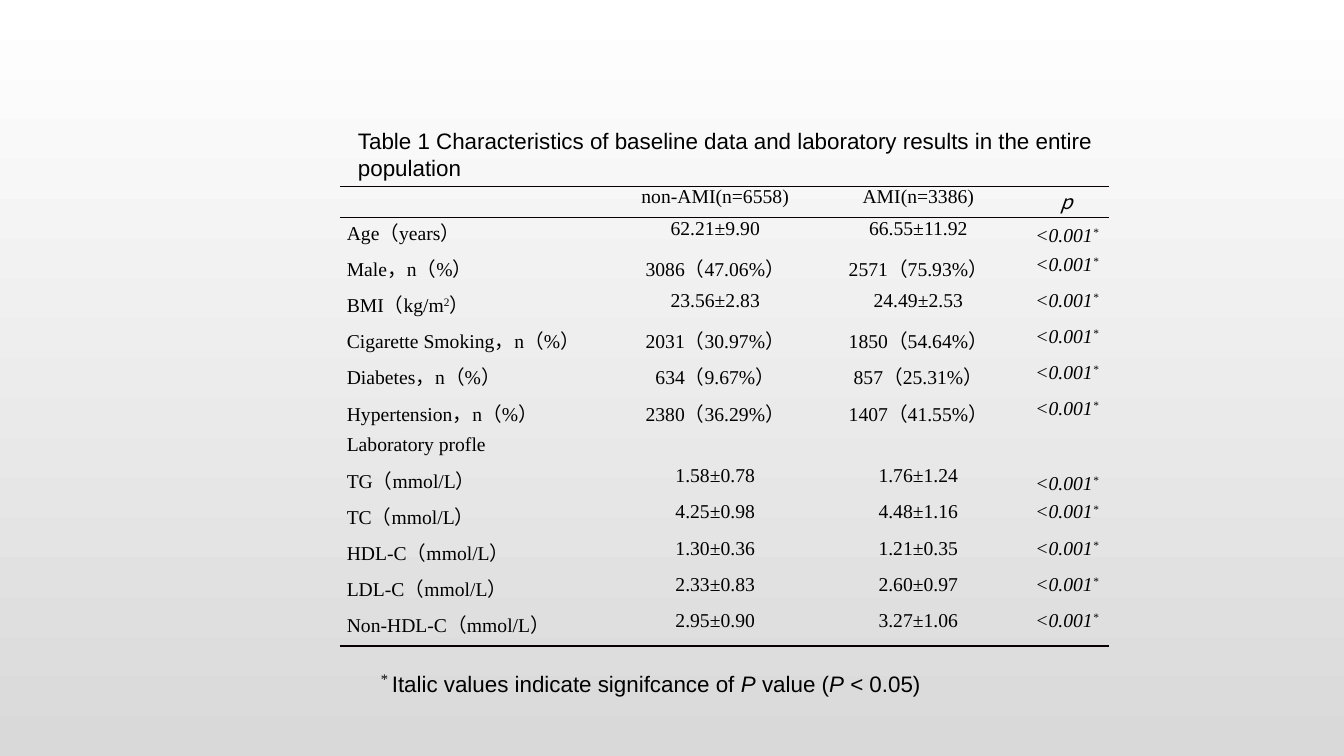
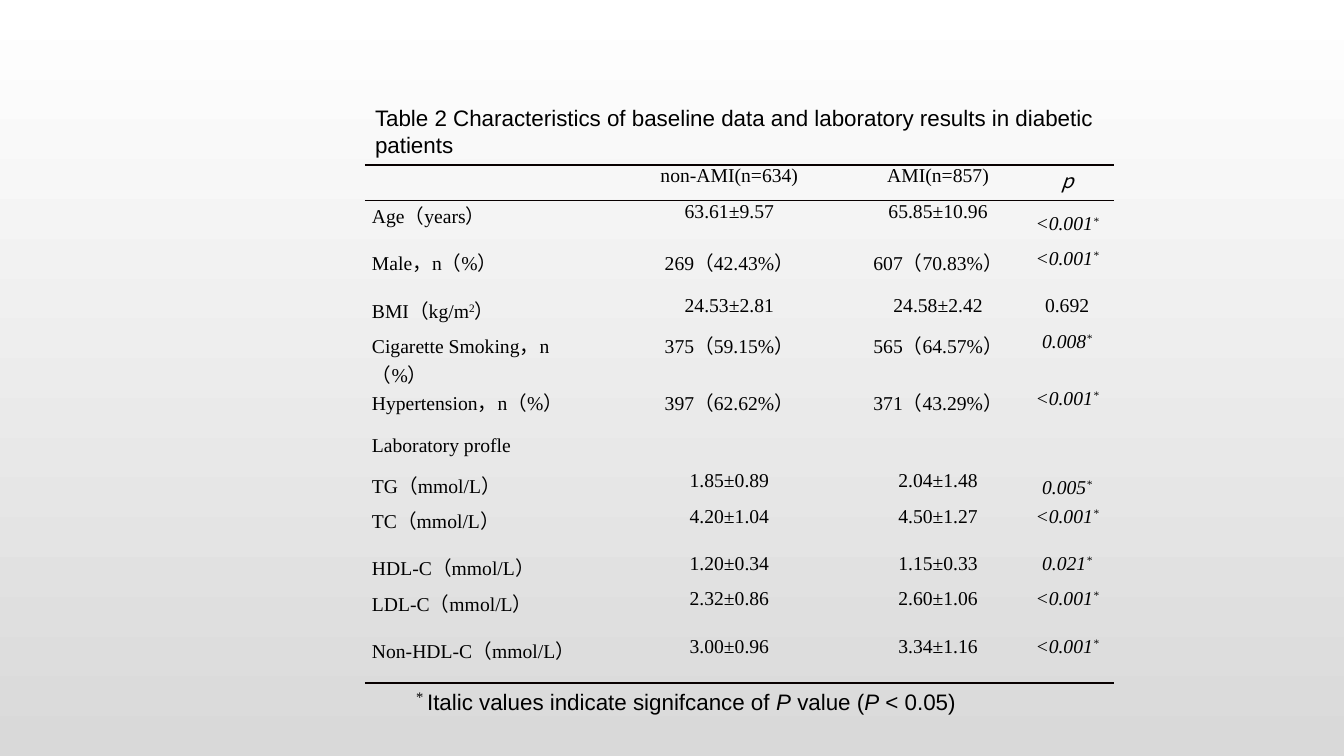
from lxml import etree
from pptx import Presentation
from pptx import util as u
from pptx.dml import color
from pptx.enum import text as t
from pptx.oxml import ns

COLORS = {"ink": "000000", "rule": "080000", "sky": "FFFFFF", "ground": "D9D9D9"}
SANS, SERIF, CJK = "Arial", "Times New Roman", "Noto Sans CJK SC"
PAGE_WIDTH, PAGE_HEIGHT = u.Inches(13.33), u.Inches(7.5)
TITLE_ONLY = 5
CELL_INSET = u.Inches(0.07)


def area(left, top, width, height):
    """Turn percentages of the slide into a box."""
    sizes = (PAGE_WIDTH, PAGE_HEIGHT) * 2
    return [int(size * share / 100) for size, share in zip(sizes, (left, top, width, height))]


def place(shape, box):
    shape.left, shape.top, shape.width, shape.height = box


def write(para, content, font=SANS, size=16, italic=False, raised=False):
    span = para.add_run()
    span.text = content
    span.font.name, span.font.size = font, u.Pt(size)
    span.font.bold, span.font.italic = False, italic
    span.font.color.rgb = color.RGBColor.from_string(COLORS["ink"])
    props = span._r.get_or_add_rPr()
    etree.SubElement(props, ns.qn("a:ea"), typeface=CJK)
    if raised:
        props.set("baseline", "30000")


def paint_background(master):
    fill = master.background.fill
    fill.gradient()
    fill.gradient_angle = 270
    for stop, name, position in zip(fill.gradient_stops, ("sky", "ground"), (0, 1)):
        stop.color.rgb = color.RGBColor.from_string(COLORS[name])
        stop.position = position


def add_title(page, box, content):
    title = page.shapes.title
    place(title, box)
    frame = title.text_frame
    frame.word_wrap, frame.auto_size = True, t.MSO_AUTO_SIZE.NONE
    frame.vertical_anchor = t.MSO_ANCHOR.TOP
    para = frame.paragraphs[0]
    para.alignment = t.PP_ALIGN.LEFT
    write(para, content)


def rule_cell(cell, top, bottom):
    """Draw the horizontal rules of a cell; a width of 0 leaves the side bare."""
    props = cell._tc.get_or_add_tcPr()
    for side, width in (("L", 0), ("R", 0), ("T", top), ("B", bottom)):
        line = etree.SubElement(props, ns.qn(f"a:ln{side}"), w=str(u.Pt(width)))
        if width:
            fill = etree.SubElement(line, ns.qn("a:solidFill"))
            etree.SubElement(fill, ns.qn("a:srgbClr"), val=COLORS["rule"])
        else:
            etree.SubElement(line, ns.qn("a:noFill"))
    cell.fill.background()


def fill_cell(cell, content, centred):
    """Write a cell; text between carets is raised."""
    cell.margin_left = cell.margin_right = CELL_INSET
    cell.margin_top = cell.margin_bottom = 0
    if not content:
        return
    para = cell.text_frame.paragraphs[0]
    para.alignment = t.PP_ALIGN.CENTER if centred else t.PP_ALIGN.LEFT
    header_p = content == "p"
    for index, part in enumerate(content.split("^")):
        write(para, part, font=CJK if header_p else SERIF, size=14,
              italic=header_p or content.endswith("^*"), raised=index % 2 == 1)


def add_results(page, box, columns, heights, rows):
    """Place the results table, sharing the box by column and row weights."""
    table = page.shapes.add_table(len(rows), len(columns), *box).table
    table.first_row = table.horz_banding = False
    for column, weight in zip(table.columns, columns):
        column.width = int(box[2] * weight / sum(columns))
    last = len(rows) - 1
    for r, (row, weight) in enumerate(zip(rows, heights)):
        table.rows[r].height = int(box[3] * weight / sum(heights))
        for c in range(len(columns)):
            cell = table.cell(r, c)
            fill_cell(cell, row[c] if c < len(row) else "", centred=c > 0)
            rule_cell(cell, top={0: 1.5, 1: 1}.get(r, 0), bottom={0: 1, last: 1.5}.get(r, 0))
            # The first p value of each group sits mid-row
            if c == 3 and row[0].startswith(("Age", "TG")):
                cell.vertical_anchor = t.MSO_ANCHOR.MIDDLE


def add_footnote(page, box):
    frame = page.shapes.add_textbox(*box).text_frame
    frame.word_wrap = True
    para = frame.paragraphs[0]
    para._p.get_or_add_pPr().set("indent", str(u.Inches(0.31)))
    write(para, "* ", font=SERIF, size=18, raised=True)
    for index, part in enumerate(("Italic values indicate signifcance of ", "P", " value (", "P", " < 0.05)")):
        write(para, part, italic=index % 2 == 1)


def add_table_page(deck, title, title_box, table_box, note_box, columns, heights, rows):
    page = deck.slides.add_slide(deck.slide_layouts[TITLE_ONLY])
    add_title(page, area(*title_box), title)
    add_results(page, area(*table_box), columns, heights, rows)
    add_footnote(page, area(*note_box))


LOW = "<0.001^*"
PAGES = [
    # Entire population
    dict(
        title="Table 1 Characteristics of baseline data and laboratory results in the entire population",
        title_box=(25.88, 16.13, 56.63, 8.53),
        table_box=(25.28, 24.67, 57.23, 60.8),
        note_box=(25.28, 87.6, 53.78, 4.67),
        columns=(2.77, 1.91, 2.12, 0.83),
        heights=[0.31] + [0.36] * 6 + [0.31] + [0.36] * 5,
        rows=[
            ("", "non-AMI(n=6558)", "AMI(n=3386)", "p"),
            ("Age（years）", "62.21±9.90", "66.55±11.92", LOW),
            ("Male，n（%）", "3086（47.06%）", "2571（75.93%）", LOW),
            ("BMI（kg/m^2^）", "23.56±2.83", "24.49±2.53", LOW),
            ("Cigarette Smoking，n（%）", "2031（30.97%）", "1850（54.64%）", LOW),
            ("Diabetes，n（%）", "634（9.67%）", "857（25.31%）", LOW),
            ("Hypertension，n（%）", "2380（36.29%）", "1407（41.55%）", LOW),
            ("Laboratory profle",),
            ("TG（mmol/L）", "1.58±0.78", "1.76±1.24", LOW),
            ("TC（mmol/L）", "4.25±0.98", "4.48±1.16", LOW),
            ("HDL-C（mmol/L）", "1.30±0.36", "1.21±0.35", LOW),
            ("LDL-C（mmol/L）", "2.33±0.83", "2.60±0.97", LOW),
            ("Non-HDL-C（mmol/L）", "2.95±0.90", "3.27±1.06", LOW),
        ],
    ),
    # Diabetic patients
    dict(
        title="Table 2 Characteristics of baseline data and laboratory results in diabetic patients",
        title_box=(27.15, 13.07, 55.2, 8.53),
        table_box=(27.15, 21.87, 55.74, 66),
        note_box=(27.9, 90, 53.78, 4.67),
        columns=(2.36, 2.51, 1.63, 0.93),
        heights=[0.35, 0.47, 0.47, 0.35, 0.38, 0.47, 0.35, 0.35, 0.47, 0.35, 0.47, 0.47],
        rows=[
            ("", "non-AMI(n=634)", "AMI(n=857)", "p"),
            ("Age（years）", "63.61±9.57", "65.85±10.96", LOW),
            ("Male，n（%）", "269（42.43%）", "607（70.83%）", LOW),
            ("BMI（kg/m^2^）", "24.53±2.81", "24.58±2.42", "0.692"),
            ("Cigarette Smoking，n（%）", "375（59.15%）", "565（64.57%）", "0.008^*"),
            ("Hypertension，n（%）", "397（62.62%）", "371（43.29%）", LOW),
            ("Laboratory profle",),
            ("TG（mmol/L）", "1.85±0.89", "2.04±1.48", "0.005^*"),
            ("TC（mmol/L）", "4.20±1.04", "4.50±1.27", LOW),
            ("HDL-C（mmol/L）", "1.20±0.34", "1.15±0.33", "0.021^*"),
            ("LDL-C（mmol/L）", "2.32±0.86", "2.60±1.06", LOW),
            ("Non-HDL-C（mmol/L）", "3.00±0.96", "3.34±1.16", LOW),
        ],
    ),
]


def main():
    deck = Presentation()
    deck.slide_width, deck.slide_height = PAGE_WIDTH, PAGE_HEIGHT
    paint_background(deck.slide_master)
    for content in PAGES:
        add_table_page(deck, **content)
    deck.save("out.pptx")


if __name__ == "__main__":
    main()
